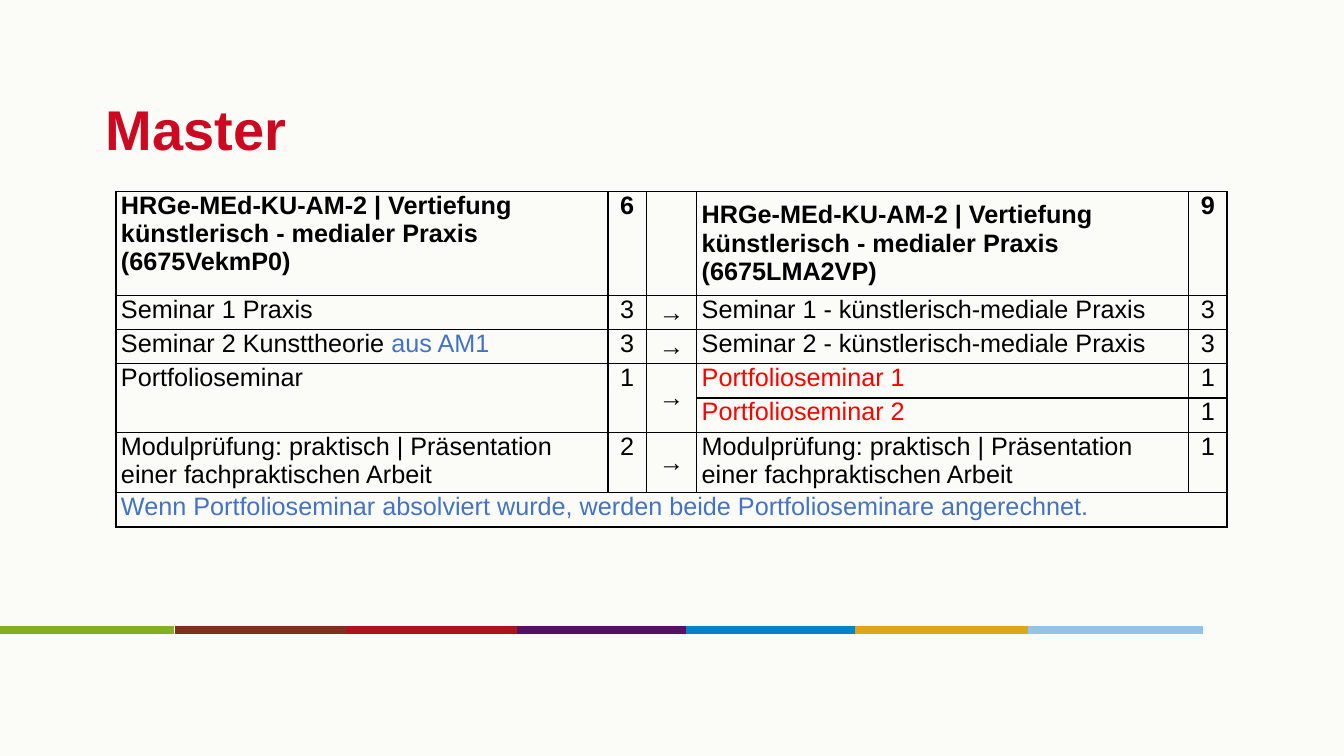
"""Build the slide that maps the old Master module to the new one."""
from dataclasses import dataclass

from lxml.etree import SubElement
from pptx import Presentation
from pptx.dml.color import RGBColor as Rgb
from pptx.enum.shapes import MSO_CONNECTOR as Connector
from pptx.enum.text import MSO_ANCHOR as Anchor, PP_ALIGN as Align
from pptx.oxml import parse_xml
from pptx.oxml.ns import nsdecls, qn
from pptx.util import Inches, Pt


@dataclass(frozen=True)
class Theme:
    font: str = "Arial"
    title_size: int = 40
    table_size: int = 18
    background: str = "FBFCF8"
    title: str = "CD0921"
    text: str = "000000"
    note: str = "4472C4"
    new: str = "FF0000"
    stripes: tuple = ("83AF23", "7D321D", "AF111D", "590F68", "0082C6", "DBA619", "91C4EA")


theme = Theme()


def write(paragraph, text, size=theme.table_size, color=theme.text, bold=False, align=Align.LEFT):
    paragraph.alignment = align
    run = paragraph.add_run()
    run.text = text
    run.font.name = theme.font
    run.font.size = Pt(size)
    run.font.bold = bold
    run.font.color.rgb = Rgb.from_string(color)


deck = Presentation()
deck.slide_width, deck.slide_height = Inches(13.33), Inches(7.5)
slide = deck.slides.add_slide(deck.slide_layouts[5])
slide.background.fill.solid()
slide.background.fill.fore_color.rgb = Rgb.from_string(theme.background)

stripe_starts = (0, 1.74, 3.43, 5.13, 6.8, 8.48, 10.2)
for start, color in zip(stripe_starts, theme.stripes):
    stripe = slide.shapes.add_connector(
        Connector.STRAIGHT, Inches(start), Inches(6.25), Inches(start + 1.73), Inches(6.25))
    stripe.line.color.rgb = Rgb.from_string(color)
    stripe.line.width = Pt(5.5)
    SubElement(stripe.element.spPr, qn("a:effectLst"))

heading = slide.shapes.title
heading.left, heading.top = Inches(1), Inches(0.65)
heading.width, heading.height = Inches(11.33), Inches(1.25)
frame = heading.text_frame
frame.margin_left = frame.margin_right = frame.margin_top = frame.margin_bottom = Inches(0.05)
frame.vertical_anchor = Anchor.MIDDLE
write(frame.paragraphs[0], "Master", size=theme.title_size, color=theme.title, bold=True)

exam = "Modulprüfung: praktisch | Präsentation einer fachpraktischen Arbeit"
module = "HRGe-MEd-KU-AM-2 | Vertiefung künstlerisch - medialer Praxis "
modules = [
    (module + "(6675VekmP0)", "6", "", module + "(6675LMA2VP)", "9"),
    ("Seminar 1 Praxis", "3", "→", "Seminar 1 - künstlerisch-mediale Praxis", "3"),
    ("Seminar 2 Kunsttheorie ", "3", "→", "Seminar 2 - künstlerisch-mediale Praxis", "3"),
    ("Portfolioseminar", "1", "→", "Portfolioseminar 1", "1"),
    ("", "", "", "Portfolioseminar 2", "1"),
    (exam, "2", "→", exam, "1"),
    ("Wenn Portfolioseminar absolviert wurde, werden beide Portfolioseminare angerechnet.",
     "", "", "", ""),
]
column_widths = (4.88, 0.38, 0.5, 4.88, 0.38)
row_heights = (1.03, 0.34, 0.34, 0.34, 0.34, 0.6, 0.34)
cell_colors = {(3, 3): theme.new, (4, 3): theme.new, (6, 0): theme.note}

comparison = slide.shapes.add_table(
    len(row_heights), len(column_widths),
    Inches(1.15), Inches(1.9), Inches(11.02), Inches(3.34)).table
comparison.first_row = comparison.horz_banding = False
for column, width in zip(comparison.columns, column_widths):
    column.width = Inches(width)
for row, height in zip(comparison.rows, row_heights):
    row.height = Inches(height)

for r, entries in enumerate(modules):
    for c, entry in enumerate(entries):
        cell = comparison.cell(r, c)
        cell.margin_left = cell.margin_right = Inches(0.05)
        cell.margin_top = cell.margin_bottom = 0
        centred_vertically = c == 2 or (r, c) == (0, 3)
        cell.vertical_anchor = Anchor.MIDDLE if centred_vertically else Anchor.TOP
        for side in "LRTB":
            cell._tc.get_or_add_tcPr().append(parse_xml(
                f'<a:ln{side} {nsdecls("a")} w="12700"><a:solidFill>'
                f'<a:srgbClr val="{theme.text}"/></a:solidFill></a:ln{side}>'))
        cell.fill.background()
        if entry:
            write(cell.text_frame.paragraphs[0], entry, bold=r == 0,
                  color=cell_colors.get((r, c), theme.text),
                  align=Align.LEFT if c in (0, 3) else Align.CENTER)

write(comparison.cell(2, 0).text_frame.paragraphs[0], "aus AM1", color=theme.note)
for c in range(3):
    comparison.cell(3, c).merge(comparison.cell(4, c))
comparison.cell(6, 0).merge(comparison.cell(6, 4))

deck.save("out.pptx")
